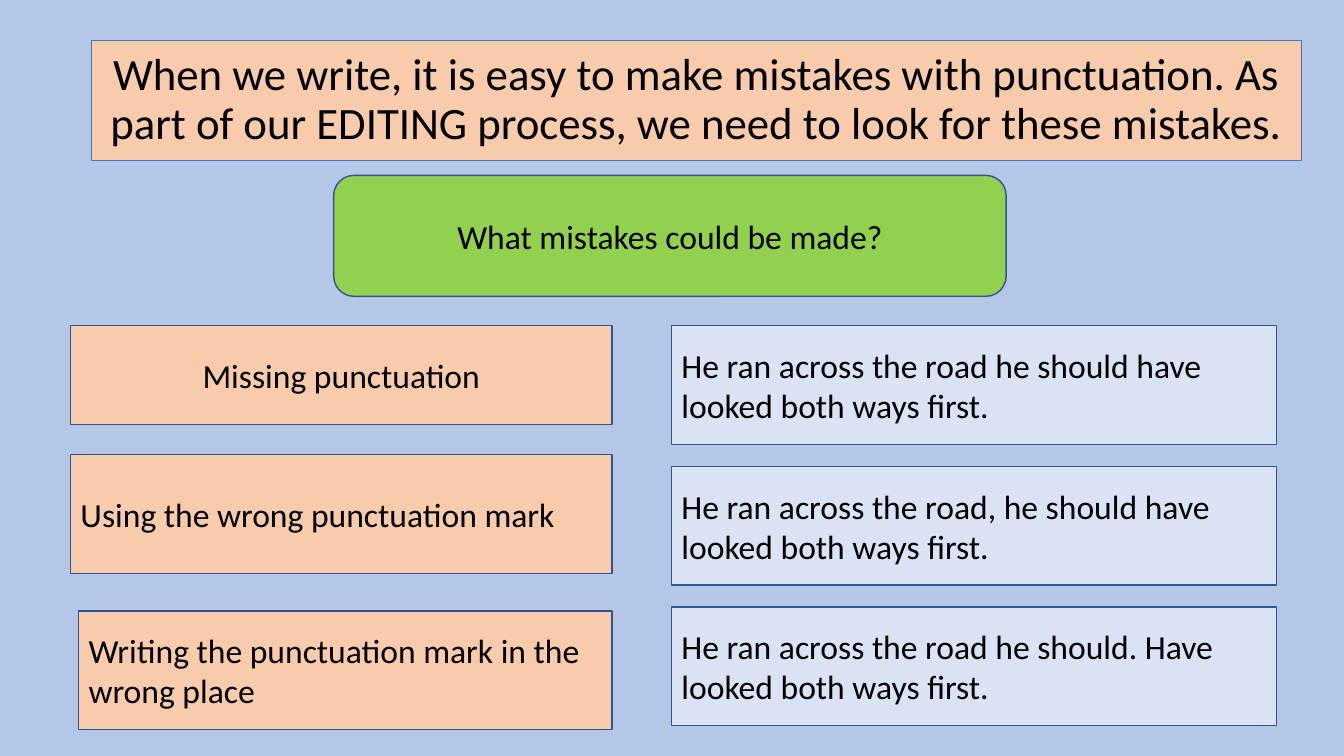
from dataclasses import dataclass

from pptx import Presentation
from pptx.dml.color import RGBColor
from pptx.enum.shapes import MSO_SHAPE as Shape
from pptx.enum.text import MSO_ANCHOR as Anchor, MSO_AUTO_SIZE as AutoSize, PP_ALIGN as Align
from pptx.util import Inches, Pt

TITLE = ("When we write, it is easy to make mistakes with punctuation. "
         "As part of our EDITING process, we need to look for these mistakes.")
QUESTION = "What mistakes could be made?"
MISTAKES = [
    ("Missing punctuation", Align.CENTER, (0.7, 3.23, 5.37, 0.98)),
    ("Using the wrong punctuation mark", Align.LEFT, (0.7, 4.51, 5.37, 1.18)),
    ("Writing the punctuation mark in the wrong place", Align.LEFT, (0.78, 6.06, 5.29, 1.18)),
]
EXAMPLES = [
    "He ran across the road he should have looked both ways first.",
    "He ran across the road, he should have looked both ways first.",
    "He ran across the road he should. Have looked both ways first.",
]
EXAMPLE_TOP, EXAMPLE_STEP = 3.23, 1.395


@dataclass(frozen=True)
class Theme:
    font: str = "Calibri"
    title_size: int = 32
    body_size: int = 24
    background: str = "B4C7E7"
    text: str = "000000"
    peach: str = "F8CBAD"
    green: str = "92D050"
    pale_blue: str = "DAE3F3"
    title_line: str = "4472C4"
    box_line: str = "325491"


THEME = Theme()


def color(value):
    """Turn a hex value into a colour."""
    return RGBColor.from_string(value)


def paint(box, fill, line, width):
    """Give a box its fill and outline."""
    box.fill.solid()
    box.fill.fore_color.rgb = color(fill)
    box.line.color.rgb = color(line)
    box.line.width = Pt(width)


def write(box, text, *, size=THEME.body_size, align=Align.LEFT, spacing=1.0):
    """Put formatted text in a box."""
    frame = box.text_frame
    frame.word_wrap = True
    frame.auto_size = AutoSize.NONE
    frame.vertical_anchor = Anchor.MIDDLE
    para = frame.paragraphs[0]
    para.alignment = align
    para.line_spacing = spacing
    span = para.add_run()
    span.text = text
    span.font.name = THEME.font
    span.font.size = Pt(size)
    span.font.color.rgb = color(THEME.text)


def add_box(page, text, place, fill, align=Align.LEFT, kind=Shape.RECTANGLE):
    """Add an outlined box with text."""
    box = page.shapes.add_shape(kind, *map(Inches, place))
    box.shadow.inherit = False
    paint(box, fill, THEME.box_line, 1)
    write(box, text, align=align)


def add_title(page):
    """Place and format the title."""
    title = page.shapes.title
    title.left, title.top, title.width, title.height = map(Inches, (0.91, 0.4, 12, 1.19))
    paint(title, THEME.peach, THEME.title_line, 0.75)
    write(title, TITLE, size=THEME.title_size, align=Align.CENTER, spacing=0.9)


def main():
    """Build and save the slide."""
    deck = Presentation()
    deck.slide_width, deck.slide_height = Inches(13.33), Inches(7.5)
    page = deck.slides.add_slide(deck.slide_layouts[5])
    page.background.fill.solid()
    page.background.fill.fore_color.rgb = color(THEME.background)

    add_title(page)
    add_box(page, QUESTION, (3.31, 1.74, 6.67, 1.2), THEME.green,
            Align.CENTER, Shape.ROUNDED_RECTANGLE)
    for text, align, place in MISTAKES:
        add_box(page, text, place, THEME.peach, align)
    for row, text in enumerate(EXAMPLES):
        place = (6.66, EXAMPLE_TOP + row * EXAMPLE_STEP, 6, 1.18)
        add_box(page, text, place, THEME.pale_blue)

    deck.save("out.pptx")


if __name__ == "__main__":
    main()
